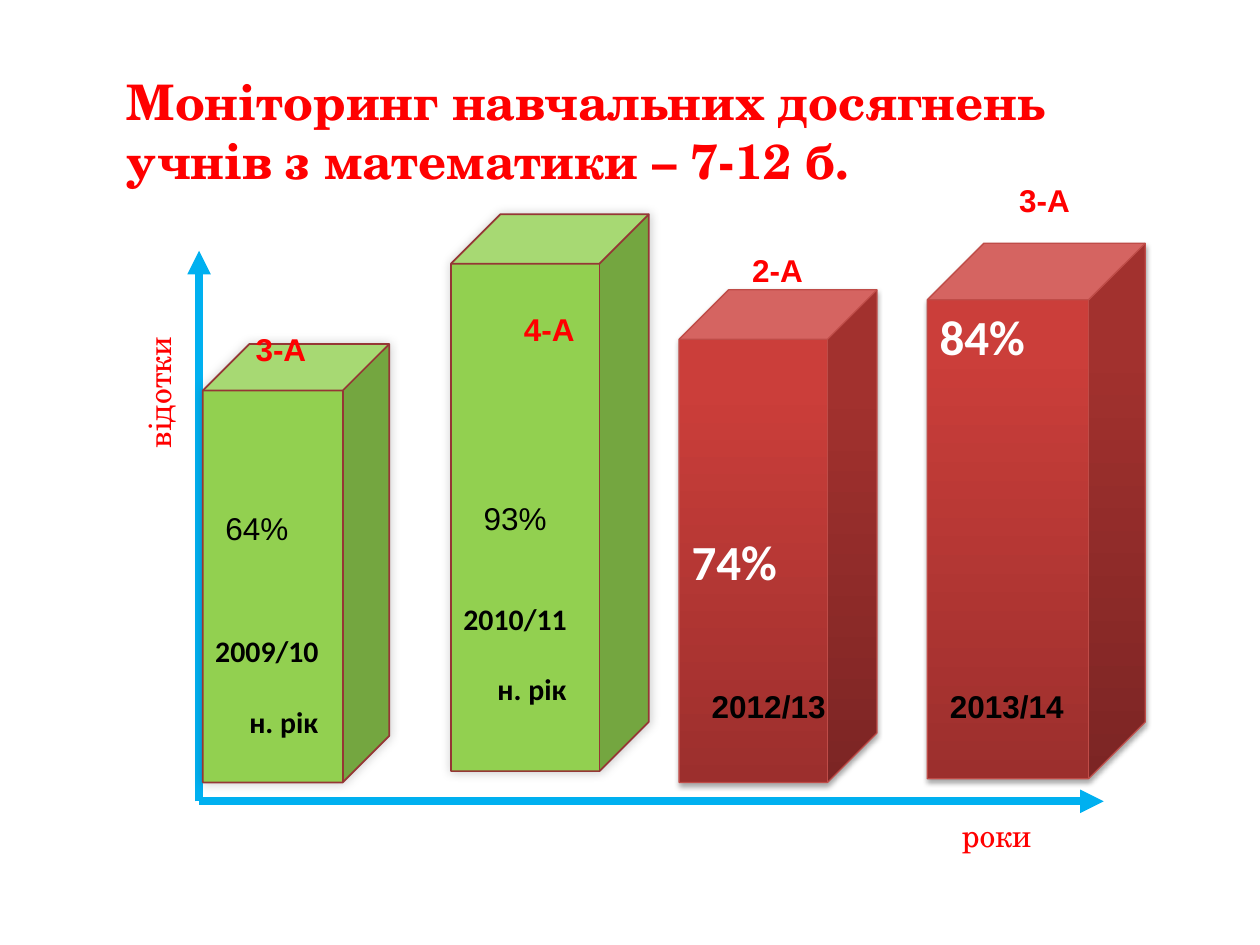
from copy import deepcopy
from dataclasses import dataclass

from lxml.etree import SubElement
from pptx import Presentation
from pptx.dml.color import RGBColor
from pptx.enum.shapes import MSO_CONNECTOR, MSO_SHAPE
from pptx.enum.text import MSO_ANCHOR, PP_ALIGN
from pptx.oxml.ns import qn
from pptx.util import Emu, Pt

SCALE = 9144


@dataclass(frozen=True)
class Theme:
    red: str = "FF0000"
    black: str = "000000"
    white: str = "FFFFFF"
    axis: str = "00B0F0"
    green: str = "92D050"
    edge: str = "953735"
    rim: str = "BF4C48"
    fade: tuple = ((0, "9C2F2D"), (0.8, "CB3E3A"), (1, "CE3B37"))
    serif: str = "TeX Gyre Schola"
    sans: str = "Arial"
    body: str = "Calibri"
    big: int = 28
    mid: int = 18
    small: int = 17


THEME = Theme()


def px(num):
    return Emu(num * SCALE)


def tint(code):
    return RGBColor.from_string(code)


def write(frame, text, font=THEME.sans, size=THEME.mid, color=THEME.black,
          bold=False, align=PP_ALIGN.LEFT, gap=0, indent=0):
    for row, line in enumerate(text.split("\n")):
        para = frame.add_paragraph() if row else frame.paragraphs[0]
        para.alignment = align
        if row:
            para.space_before = Pt(gap)
            props = para._p.get_or_add_pPr()
            props.set("marL", str(px(indent)))
            props.set("indent", "0")
        run = para.add_run()
        run.text = line
        run.font.name = font
        run.font.size = Pt(size)
        run.font.bold = bold
        run.font.color.rgb = tint(color)


def label(slide, box, text, wrap=True, turn=0, **style):
    shape = slide.shapes.add_textbox(*map(px, box))
    shape.rotation = turn
    shape.text_frame.word_wrap = wrap
    write(shape.text_frame, text, **style)


def shade(shape, alpha, blur, dist, angle):
    shape.shadow.inherit = False
    effects = shape._element.spPr.find(qn("a:effectLst"))
    outer = SubElement(effects, qn("a:outerShdw"), blurRad=str(Pt(blur)),
                       dist=str(Pt(dist)), dir=str(angle * 60000),
                       algn="ctr", rotWithShape="0")
    color = SubElement(outer, qn("a:srgbClr"), val=THEME.black)
    SubElement(color, qn("a:alpha"), val=str(alpha * 1000))


def cube(slide, box, edge, width, depth=0.25):
    shape = slide.shapes.add_shape(MSO_SHAPE.CUBE, *map(px, box))
    shape.adjustments[0] = depth
    shape.line.color.rgb = tint(edge)
    shape.line.width = Pt(width)
    shape.text_frame.word_wrap = True
    return shape


def green(slide, box, text, foot):
    shape = cube(slide, box, THEME.edge, 1)
    shape.fill.solid()
    shape.fill.fore_color.rgb = tint(THEME.green)
    shade(shape, 20, 6, 0, 225)
    frame = shape.text_frame
    frame.vertical_anchor = MSO_ANCHOR.BOTTOM
    frame.margin_bottom = px(foot)
    write(frame, text, font=THEME.body, size=THEME.small, bold=True,
          gap=20, indent=27)


def red(slide, box, text, anchor, depth=0.25):
    shape = cube(slide, box, THEME.rim, 0.75, depth)
    fill = shape.fill
    fill.gradient()
    fill.gradient_angle = 90
    stops = shape._element.spPr.find(".//" + qn("a:gsLst"))
    stops.append(deepcopy(stops[-1]))
    for stop, (place, code) in zip(fill.gradient_stops, THEME.fade):
        stop.position = place
        stop.color.rgb = tint(code)
    shade(shape, 35, 3.1, 1.8, 90)
    shape.text_frame.vertical_anchor = anchor
    write(shape.text_frame, text, font=THEME.body, size=THEME.big,
          color=THEME.white, bold=True)


def arrow(slide, start, end):
    line = slide.shapes.add_connector(
        MSO_CONNECTOR.STRAIGHT, *map(px, start + end))
    line.line.color.rgb = tint(THEME.axis)
    line.line.width = Pt(4.5)
    props = line._element.spPr
    SubElement(props.find(qn("a:ln")), qn("a:tailEnd"), type="triangle")
    SubElement(props, qn("a:effectLst"))


def axes(slide):
    base = (158, 636)
    arrow(slide, base, (876, 636))
    arrow(slide, base, (158, 199))
    style = dict(wrap=False, font=THEME.serif, color=THEME.red,
                 align=PP_ALIGN.CENTER)
    label(slide, (736, 643, 110, 32), "роки", **style)
    label(slide, (50, 289, 157, 45), "відотки", turn=270, **style)


def main():
    deck = Presentation()
    deck.slide_width, deck.slide_height = px(1000), px(750)
    slide = deck.slides.add_slide(deck.slide_layouts[6])

    red(slide, (736, 193, 173, 425), "84%", MSO_ANCHOR.TOP, 0.26)
    red(slide, (539, 230, 157, 391), "74%", MSO_ANCHOR.MIDDLE)
    green(slide, (358, 170, 157, 442), "2010/11\nн. рік", 51)
    axes(slide)
    label(slide, (91, 52, 780, 104),
          "Моніторинг навчальних досягнень учнів з математики – 7-12 б.",
          font=THEME.serif, size=THEME.big, color=THEME.red, bold=True)
    green(slide, (161, 273, 148, 348), "2009/10\nн. рік", 34)

    for left, top, wide, text in (
            (169, 399, 79, "64%"), (374, 391, 71, "93%")):
        label(slide, (left, top, wide, 40), text)
    for left, top, wide, text in (
            (193, 257, 87, "3-А"), (406, 241, 83, "4-А"),
            (587, 194, 102, "2-А"), (799, 139, 71, "3-А")):
        label(slide, (left, top, wide, 40), text, color=THEME.red, bold=True)
    for left, wide, text in ((555, 151, "2012/13"), (744, 142, "2013/14")):
        label(slide, (left, 540, wide, 40), text, bold=True)

    deck.save("out.pptx")


if __name__ == "__main__":
    main()
